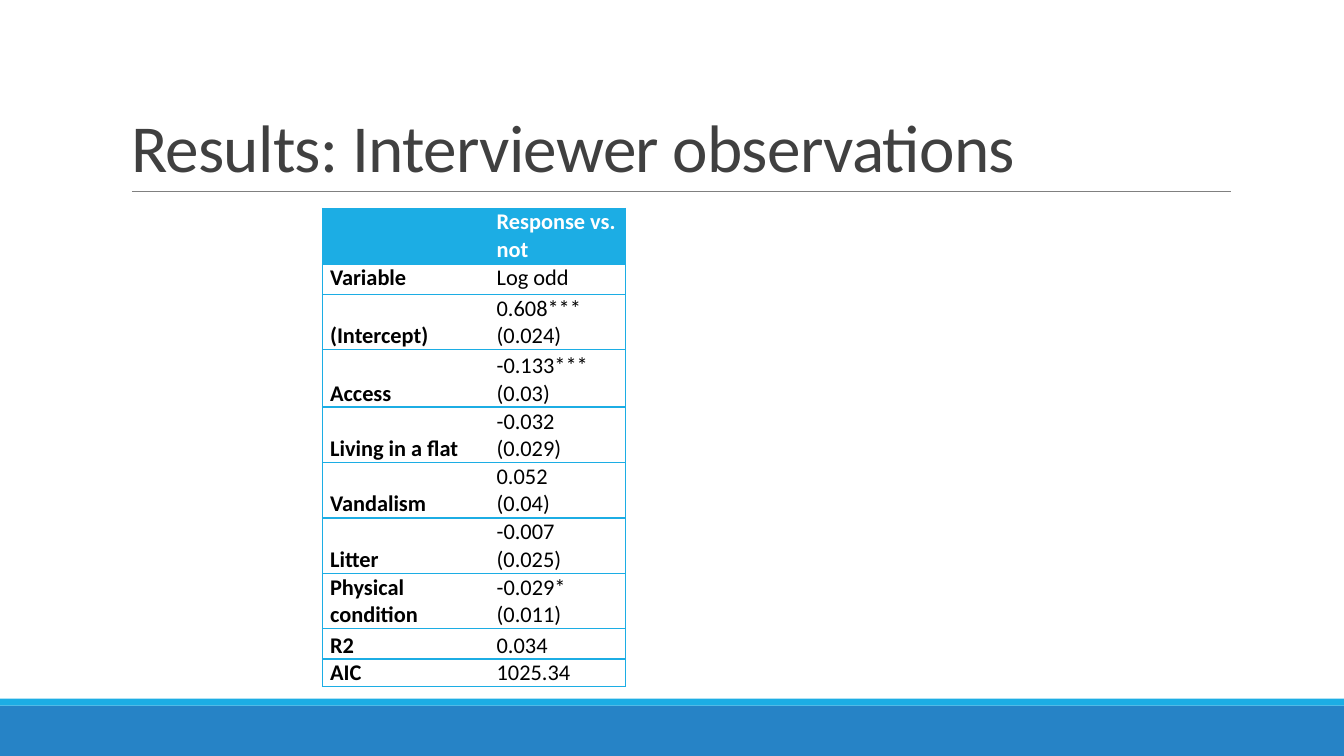
"""Build the slide on interviewer observations with its table of log odds."""

from dataclasses import dataclass

import lxml.etree
import pptx
import pptx.dml.color
import pptx.enum.shapes
import pptx.enum.text
import pptx.oxml
import pptx.oxml.ns
import pptx.util

Pt = pptx.util.Pt
Anchor = pptx.enum.text.MSO_ANCHOR
COLOURS = {
    "title": "404040", "rule": "808080", "accent": "1CADE4",
    "footer": "2683C6", "header": "FFFFFF", "body": "000000",
}
FONT = "Calibri"


@dataclass
class Bar:
    top: float
    height: float
    colour: str


@dataclass
class Row:
    label: str
    value: str
    height: float = 39.6
    anchor: Anchor = Anchor.BOTTOM


BARS = [Bar(504, 36, "footer"), Bar(499, 5, "accent")]
ROWS = [
    Row("", "Response vs. not", anchor=Anchor.TOP),
    Row("Variable", "Log odd", 21.6, Anchor.TOP),
    Row("(Intercept)", "0.608***\n(0.024)"),
    Row("Access", "-0.133***\n(0.03)", 41),
    Row("Living in a flat", "-0.032\n(0.029)"),
    Row("Vandalism", "0.052\n(0.04)"),
    Row("Litter", "-0.007\n(0.025)"),
    Row("Physical condition", "-0.029*\n(0.011)"),
    Row("R2", "0.034", 21.6),
    Row("AIC", "1025.34", 19.5),
]
COLUMN_WIDTHS = [119, 97.5]


def colour(name: str) -> pptx.dml.color.RGBColor:
    return pptx.dml.color.RGBColor.from_string(COLOURS[name])


def style_font(font, size: float, name: str, bold: bool = False) -> None:
    font.name = FONT
    font.size = Pt(size)
    font.bold = bold
    font.color.rgb = colour(name)


def draw_title(page, text: str) -> None:
    box = page.shapes.title
    box.left, box.top, box.width, box.height = Pt(86.4), Pt(22.3), Pt(792), Pt(114.5)
    frame = box.text_frame
    frame.text = text
    frame.word_wrap = True
    frame.auto_size = pptx.enum.text.MSO_AUTO_SIZE.NONE
    frame.vertical_anchor = Anchor.BOTTOM
    para = frame.paragraphs[0]
    para.alignment = pptx.enum.text.PP_ALIGN.LEFT
    para.line_spacing = 0.85
    span = para.runs[0]
    style_font(span.font, 48, "title")
    span._r.get_or_add_rPr().set("spc", "-50")


def draw_bar(page, bar: Bar, width: int) -> None:
    shape = page.shapes.add_shape(
        pptx.enum.shapes.MSO_SHAPE.RECTANGLE, 0, Pt(bar.top), width, Pt(bar.height))
    shape.shadow.inherit = False
    shape.fill.solid()
    shape.fill.fore_color.rgb = colour(bar.colour)
    shape.line.fill.background()


def draw_rule(page) -> None:
    rule = page.shapes.add_connector(
        pptx.enum.shapes.MSO_CONNECTOR.STRAIGHT, Pt(94.3), Pt(136.8), Pt(879.1), Pt(136.8))
    rule.line.color.rgb = colour("rule")
    rule.line.width = Pt(0.5)
    lxml.etree.SubElement(rule._element.spPr, pptx.oxml.ns.qn("a:effectLst"))


def set_borders(cell, column: int) -> None:
    inner = "lnR" if column == 0 else "lnL"
    properties = cell._tc.get_or_add_tcPr()
    for side in ("lnL", "lnR", "lnT", "lnB"):
        paint = "<a:noFill/>" if side == inner else (
            f'<a:solidFill><a:srgbClr val="{COLOURS["accent"]}"/></a:solidFill>')
        properties.append(pptx.oxml.parse_xml(
            f'<a:{side} {pptx.oxml.ns.nsdecls("a")} w="{Pt(1)}">{paint}</a:{side}>'))


def fill_cell(cell, text: str, row: Row, column: int, header: bool) -> None:
    set_borders(cell, column)
    if header:
        cell.fill.solid()
        cell.fill.fore_color.rgb = colour("accent")
    else:
        cell.fill.background()
    cell.margin_left = cell.margin_right = Pt(5.4)
    cell.margin_top = cell.margin_bottom = 0
    cell.vertical_anchor = row.anchor
    cell.text_frame.text = text
    for para in cell.text_frame.paragraphs:
        for span in para.runs:
            style_font(span.font, 16, "header" if header else "body", header or column == 0)


def draw_table(page) -> None:
    table = page.shapes.add_table(
        len(ROWS), len(COLUMN_WIDTHS), Pt(230.4), Pt(149),
        Pt(sum(COLUMN_WIDTHS)), Pt(sum(row.height for row in ROWS))).table
    table.horz_banding = False
    for column, width in zip(table.columns, COLUMN_WIDTHS):
        column.width = Pt(width)
    for index, row in enumerate(ROWS):
        table.rows[index].height = Pt(row.height)
        for column, text in enumerate((row.label, row.value)):
            fill_cell(table.cell(index, column), text, row, column, index == 0)


def main() -> None:
    deck = pptx.Presentation()
    deck.slide_width, deck.slide_height = Pt(960), Pt(540)
    page = deck.slides.add_slide(deck.slide_layouts[5])
    for bar in BARS:
        draw_bar(page, bar, deck.slide_width)
    draw_rule(page)
    draw_title(page, "Results: Interviewer observations")
    draw_table(page)
    deck.save("out.pptx")


if __name__ == "__main__":
    main()
